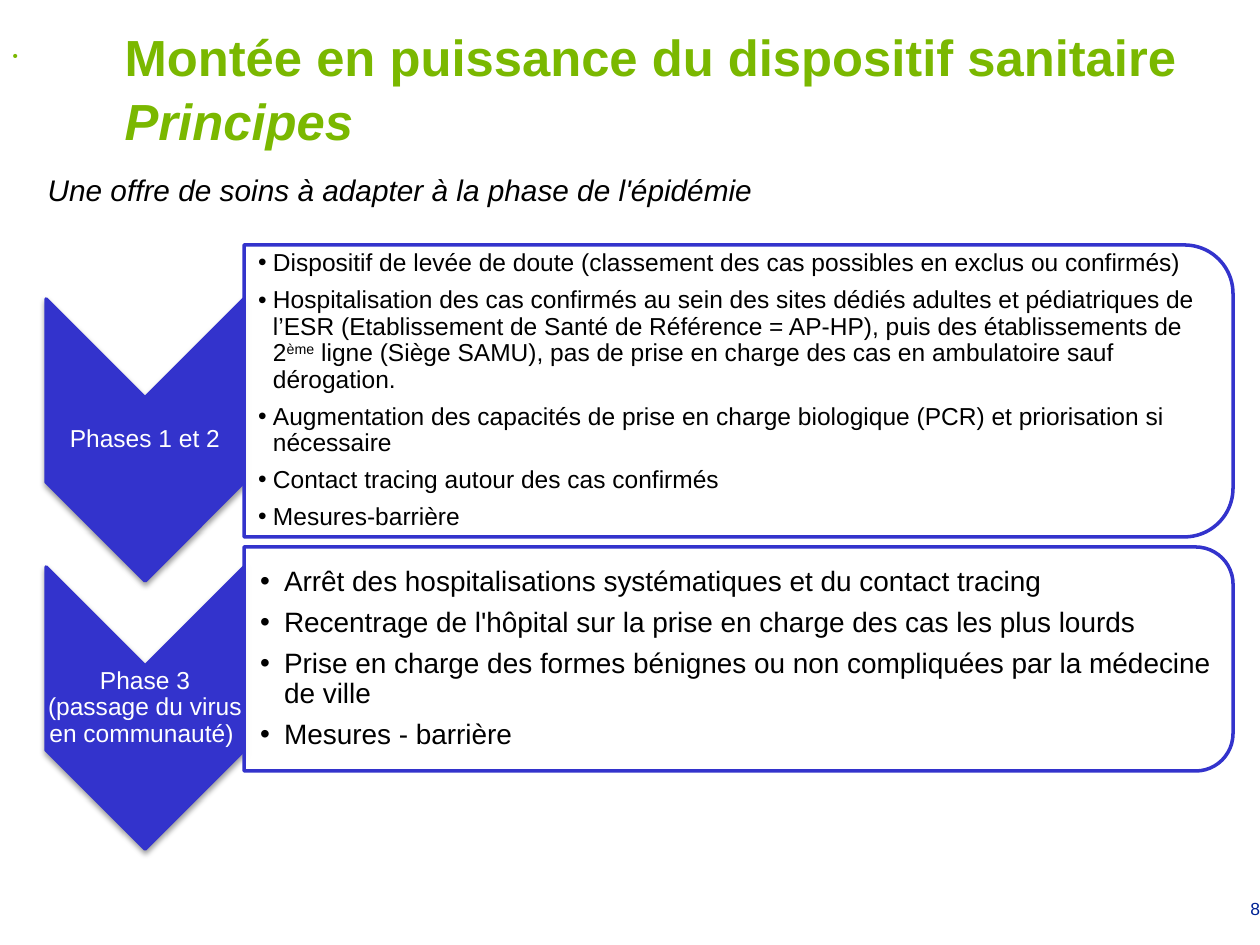
from lxml import etree
from pptx import Presentation
from pptx.dml.color import RGBColor
from pptx.enum.shapes import MSO_SHAPE
from pptx.enum.text import MSO_ANCHOR, MSO_AUTO_SIZE, PP_ALIGN
from pptx.oxml.ns import qn
from pptx.util import Emu, Pt

PX = 914400 / 126
FONT = "Arial"
GREEN = RGBColor(0x7A, 0xB8, 0x00)
BLUE = RGBColor(0x33, 0x33, 0xCC)
NAVY = RGBColor(0x00, 0x23, 0x95)
BLACK = RGBColor(0, 0, 0)
WHITE = RGBColor(0xFF, 0xFF, 0xFF)

# Each phase: label, text size, hanging indent, bullets (a list holds base and superscript spans)
PHASES = [
    ("Phases 1 et 2", 14, 15, [
        "Dispositif de levée de doute (classement des cas possibles en exclus ou confirmés)",
        ["Hospitalisation des cas confirmés au sein des sites dédiés adultes et pédiatriques de "
         "l’ESR (Etablissement de Santé de Référence = AP-HP), puis des établissements de 2",
         "ème",
         " ligne (Siège SAMU), pas de prise en charge des cas en ambulatoire sauf dérogation."],
        "Augmentation des capacités de prise en charge biologique (PCR) et priorisation si nécessaire",
        "Contact tracing autour des cas confirmés",
        "Mesures-barrière",
    ]),
    ("Phase 3\v(passage du virus en communauté) ", 16, 24, [
        "Arrêt des hospitalisations systématiques et du contact tracing",
        "Recentrage de l'hôpital sur la prise en charge des cas les plus lourds",
        "Prise en charge des formes bénignes ou non compliquées par la médecine de ville",
        "Mesures - barrière",
    ]),
]


def px(length):
    return Emu(round(length * PX))


def place(shape, box):
    shape.left, shape.top, shape.width, shape.height = map(px, box)


def style(para, size, color, align=PP_ALIGN.LEFT):
    para.alignment = align
    font = para.font
    font.name, font.size = FONT, Pt(size)
    font.color.rgb = color


def set_bullet(para, indent, percent=None):
    props = para._p.get_or_add_pPr()
    props.set("marL", str(px(indent)))
    props.set("indent", str(-px(indent)))
    if percent:
        etree.SubElement(props, qn("a:buSzPct"), val=str(percent * 1000))
    etree.SubElement(props, qn("a:buFont"), typeface=FONT)
    etree.SubElement(props, qn("a:buChar"), char="•")


def add_text_box(page, box, left_inset=1):
    frame = page.shapes.add_textbox(*map(px, box)).text_frame
    frame.word_wrap = True
    frame.vertical_anchor = MSO_ANCHOR.MIDDLE
    frame.margin_left = px(left_inset)
    frame.margin_top = frame.margin_right = frame.margin_bottom = px(1)
    return frame


def add_quarter_turned(page, kind, box, fill):
    """Shape turned by 90 degrees which covers the given box."""
    left, top, width, height = box
    shift = (width - height) / 2
    shape = page.shapes.add_shape(
        kind, px(left + shift), px(top - shift), px(height), px(width))
    shape.rotation = 90
    shape.shadow.inherit = False
    shape.fill.solid()
    shape.fill.fore_color.rgb = fill
    shape.line.color.rgb = BLUE
    shape.line.width = Pt(2)
    return shape


def add_title(page, box):
    title = page.shapes.title
    place(title, box)
    frame = title.text_frame
    frame.auto_size = MSO_AUTO_SIZE.NONE
    frame.vertical_anchor = MSO_ANCHOR.MIDDLE
    para = frame.paragraphs[0]
    set_bullet(para, 112, percent=30)
    para.line_spacing = 1.05
    style(para, 29, GREEN)
    para.font.bold = True
    para.add_run().text = "Montée en puissance du dispositif sanitaire"
    para.add_line_break()
    span = para.add_run()
    span.text = "Principes"
    span.font.italic = True


def add_subtitle(page, box):
    body = page.placeholders[1]
    place(body, box)
    frame = body.text_frame
    frame.auto_size = MSO_AUTO_SIZE.NONE
    para = frame.paragraphs[0]
    para.text = "Une offre de soins à adapter à la phase de l'épidémie"
    props = para._p.get_or_add_pPr()
    props.set("marL", "0")
    props.set("indent", "0")
    etree.SubElement(props, qn("a:buNone"))
    para.space_before = Pt(0)
    style(para, 17, BLACK)
    para.font.italic = True


def add_chevron(page, box, label):
    left, top, width, height = box
    chevron = add_quarter_turned(page, MSO_SHAPE.CHEVRON, box, BLUE)
    # Soft shadow below the arrow
    effects = chevron._element.spPr.find(qn("a:effectLst"))
    shadow = etree.SubElement(effects, qn("a:outerShdw"), blurRad="40000",
                              dist="20000", dir="5400000", rotWithShape="0")
    color = etree.SubElement(shadow, qn("a:srgbClr"), val="000000")
    etree.SubElement(color, qn("a:alpha"), val="38000")
    # Label between the notch and the point
    notch = width // 2
    frame = add_text_box(page, (left, top + notch, width, height - 2 * notch))
    para = frame.paragraphs[0]
    para.text = label
    para.line_spacing = 0.9
    para.space_after = Pt(5)
    style(para, 14, WHITE, PP_ALIGN.CENTER)


def add_panel(page, box, size, indent, items):
    left, top, width, height = box
    panel = add_quarter_turned(page, MSO_SHAPE.ROUND_2_SAME_RECTANGLE, box, WHITE)
    color = panel._element.spPr.find(qn("a:solidFill"))[0]
    etree.SubElement(color, qn("a:alpha"), val="90000")
    # Bullets stay clear of the rounded corners
    inset = height // 20
    frame = add_text_box(
        page, (left, top + inset, width - inset, height - 2 * inset), left_inset=size)
    for index, item in enumerate(items):
        para = frame.add_paragraph() if index else frame.paragraphs[0]
        set_bullet(para, indent)
        para.line_spacing = 0.9
        para.space_after = Pt(6)
        style(para, size, BLACK)
        for number, text in enumerate([item] if isinstance(item, str) else item):
            span = para.add_run()
            span.text = text
            if number % 2:
                span._r.get_or_add_rPr().set("baseline", "30000")


def add_page_number(page, box):
    frame = add_text_box(page, box)
    frame.vertical_anchor = MSO_ANCHOR.TOP
    frame.margin_top, frame.margin_right = px(6), 0
    para = frame.paragraphs[0]
    para.text = "8"
    style(para, 10, NAVY, PP_ALIGN.RIGHT)


def main():
    deck = Presentation()
    deck.slide_width, deck.slide_height = px(1260), px(945)
    page = deck.slides.add_slide(deck.slide_layouts[1])
    add_title(page, (0, 50, 1260, 74))
    add_subtitle(page, (35, 165, 1211, 625))
    rows = [(299, 245, 292), (567, 547, 224)]
    for (chevron_top, panel_top, panel_height), phase in zip(rows, PHASES):
        label, size, indent, items = phase
        add_chevron(page, (46, chevron_top, 198, 282), label)
        add_panel(page, (244, panel_top, 989, panel_height), size, indent, items)
    add_page_number(page, (1210, 892, 50, 50))
    deck.save("out.pptx")


if __name__ == "__main__":
    main()
